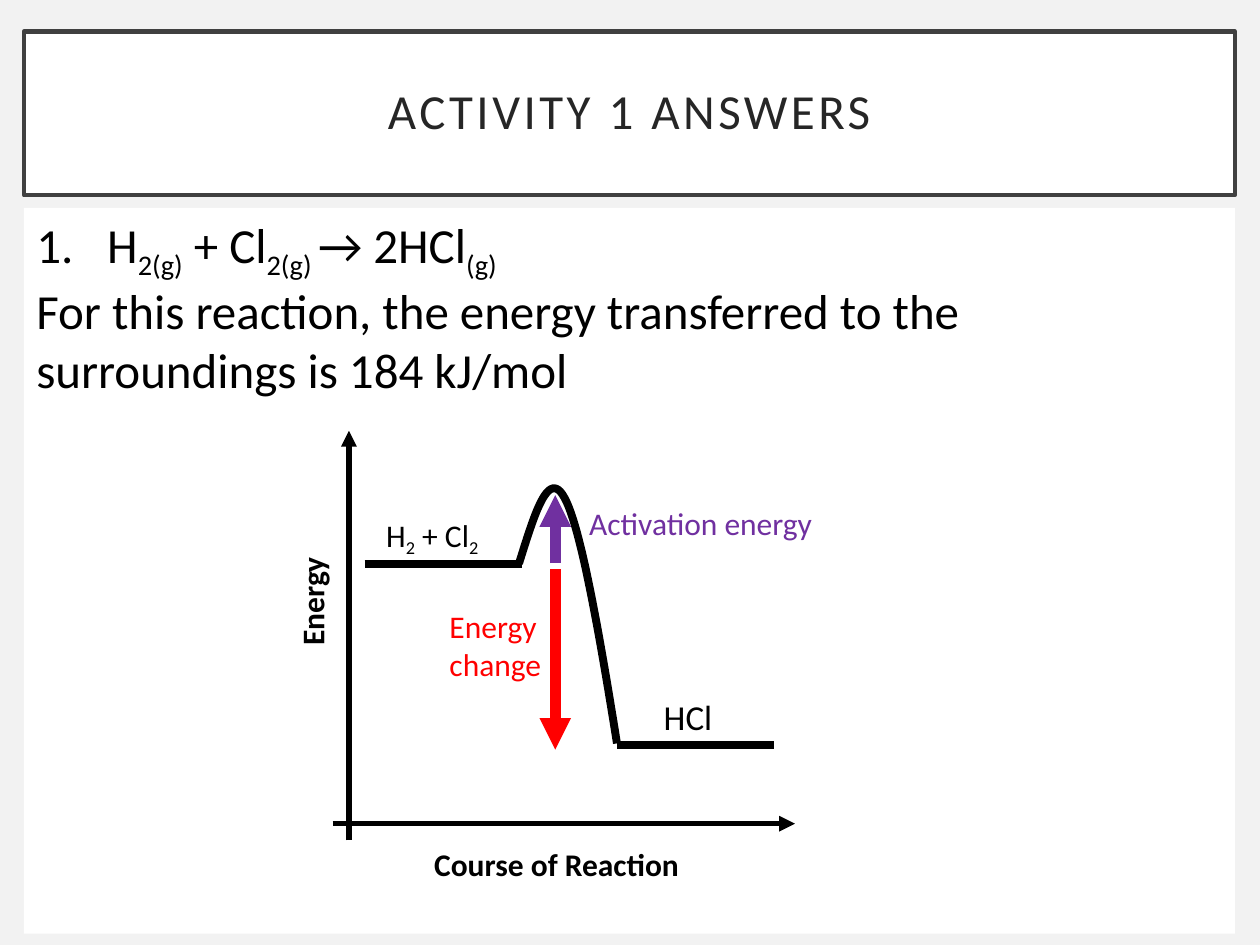
from pptx import Presentation
from pptx.dml.color import RGBColor
from pptx.enum.shapes import MSO_CONNECTOR, MSO_SHAPE
from pptx.enum.text import MSO_ANCHOR, PP_ALIGN
from pptx.oxml.ns import qn
from pptx.util import Pt
from lxml.etree import SubElement

COLOURS = {
    "backdrop": "F2F2F2", "panel": "FFFFFF", "frame": "404040", "title": "262626",
    "black": "000000", "red": "FF0000", "purple": "7030A0",
}
FONT = "Calibri"

# Every second piece of a line is a subscript.
TITLE = ["ACTIVITY 1 ANSWERS"]
EQUATION = ["H", "2(g)", " + Cl", "2(g) ", "→ 2HCl", "(g)"]
STATEMENT = ["For this reaction, the energy transferred to the surroundings is 184 kJ/mol"]

PANEL_LEFT, PANEL_WIDTH = 13.7, 691.9
TITLE_TOP, TITLE_HEIGHT = 18, 93.6
BODY_TOP, BODY_HEIGHT = 118.8, 414.7
NUMBER_INDENT = 40.5

# start x, start y, end x, end y, colour, width, arrowhead
LINES = [
    (199.4, 480.2, 199.4, 246.2, "black", 3, True),     # energy axis
    (190.1, 470.7, 454.3, 470.7, "black", 3, True),     # course axis
    (208.4, 322.3, 298.2, 322.3, "black", 4.5, False),  # reactants
    (352.6, 425.7, 442.3, 425.7, "black", 4.5, False),  # product
    (317.3, 325.2, 317.3, 428.4, "red", 6, True),       # energy change
    (317.3, 321.8, 317.3, 283, "purple", 6, True),      # activation energy
]

# Each stretch of the reaction curve: start, two control points, end
CURVE = [
    ((296.6, 322), (305.3, 294.5), (313.2, 267.1), (322.6, 284.4)),
    ((322.6, 284.4), (331.9, 301), (342.7, 362.9), (352.6, 424.8)),
]
STEPS = 24

# text, left, top, width, height, size, colour, bold, rotation, wrap
LABELS = [
    (["HCl"], 372.2, 393.8, 42.5, 31.5, 20, "black", False, 0, False),
    (["Energy"], 145.6, 328.9, 65.5, 29.1, 18, "black", True, 270, False),
    (["Course of Reaction"], 241, 479.1, 155.5, 29.1, 18, "black", True, 0, False),
    (["H", "2", " + Cl", "2"], 213.6, 291.1, 77.8, 29.1, 18, "black", False, 0, False),
    (["Energy change"], 249.8, 343.4, 117.4, 50.9, 18, "red", False, 0, True),
    (["Activation energy"], 329.6, 284.2, 168.5, 29.1, 18, "purple", False, 0, True),
]


def rgb(name):
    return RGBColor.from_string(COLOURS[name])


def write(para, pieces, size, colour, bold=False):
    para.font.name, para.font.size, para.font.bold = FONT, Pt(size), bold
    para.font.color.rgb = rgb(colour)
    for index, piece in enumerate(pieces):
        span = para.add_run()
        span.text = piece
        if index % 2:
            span._r.get_or_add_rPr().set("baseline", "-25000")


def add_panel(page, top, height):
    panel = page.shapes.add_shape(
        MSO_SHAPE.RECTANGLE, Pt(PANEL_LEFT), Pt(top), Pt(PANEL_WIDTH), Pt(height))
    panel.shadow.inherit = False
    panel.fill.solid()
    panel.fill.fore_color.rgb = rgb("panel")
    panel.line.fill.background()
    panel.text_frame.word_wrap = True
    return panel


def add_title(page):
    panel = add_panel(page, TITLE_TOP, TITLE_HEIGHT)
    panel.line.color.rgb, panel.line.width = rgb("frame"), Pt(2.5)
    frame = panel.text_frame
    frame.vertical_anchor = MSO_ANCHOR.MIDDLE
    frame.margin_left = frame.margin_right = Pt(14.4)
    frame.margin_top = frame.margin_bottom = Pt(14.4)
    para = frame.paragraphs[0]
    para.alignment, para.line_spacing = PP_ALIGN.CENTER, 0.9
    write(para, TITLE, 28, "title")
    para.runs[0]._r.get_or_add_rPr().set("spc", "200")


def add_body(page):
    frame = add_panel(page, BODY_TOP, BODY_HEIGHT).text_frame
    frame.vertical_anchor = MSO_ANCHOR.TOP
    numbered, plain = frame.paragraphs[0], frame.add_paragraph()
    settings = numbered._p.get_or_add_pPr()
    settings.set("marL", str(Pt(NUMBER_INDENT)))
    settings.set("indent", str(-Pt(NUMBER_INDENT)))
    SubElement(settings, qn("a:buFont"), typeface="+mj-lt")
    SubElement(settings, qn("a:buAutoNum"), type="arabicPeriod")
    for para, pieces in ((numbered, EQUATION), (plain, STATEMENT)):
        para.alignment = PP_ALIGN.LEFT
        write(para, pieces, 28, "black")


def add_line(page, x1, y1, x2, y2, colour, width, arrow):
    line = page.shapes.add_connector(
        MSO_CONNECTOR.STRAIGHT, Pt(x1), Pt(y1), Pt(x2), Pt(y2))
    line.line.color.rgb, line.line.width = rgb(colour), Pt(width)
    if arrow:
        SubElement(line.line._get_or_add_ln(), qn("a:tailEnd"), type="triangle")
    SubElement(line._element.spPr, qn("a:effectLst"))


def bezier(points, t):
    weights = ((1 - t) ** 3, 3 * t * (1 - t) ** 2, 3 * t ** 2 * (1 - t), t ** 3)
    return tuple(Pt(sum(w * p[axis] for w, p in zip(weights, points)))
                 for axis in (0, 1))


def add_curve(page):
    points = [bezier(part, step / STEPS) for part in CURVE for step in range(1, STEPS + 1)]
    builder = page.shapes.build_freeform(*bezier(CURVE[0], 0))
    builder.add_line_segments(points, close=False)
    curve = builder.convert_to_shape()
    curve.shadow.inherit = False
    curve.fill.background()
    curve.line.color.rgb, curve.line.width = rgb("black"), Pt(4.5)


def add_label(page, pieces, left, top, width, height, size, colour, bold, rotation, wrap):
    box = page.shapes.add_textbox(Pt(left), Pt(top), Pt(width), Pt(height))
    box.rotation = rotation
    box.text_frame.word_wrap = wrap
    write(box.text_frame.paragraphs[0], pieces, size, colour, bold)


def main():
    deck = Presentation()
    deck.slide_width, deck.slide_height = Pt(720), Pt(540)
    page = deck.slides.add_slide(deck.slide_layouts[6])
    page.background.fill.solid()
    page.background.fill.fore_color.rgb = rgb("backdrop")
    add_title(page)
    add_body(page)
    for line in LINES:
        add_line(page, *line)
    add_curve(page)
    for label in LABELS:
        add_label(page, *label)
    deck.save("out.pptx")


if __name__ == "__main__":
    main()
